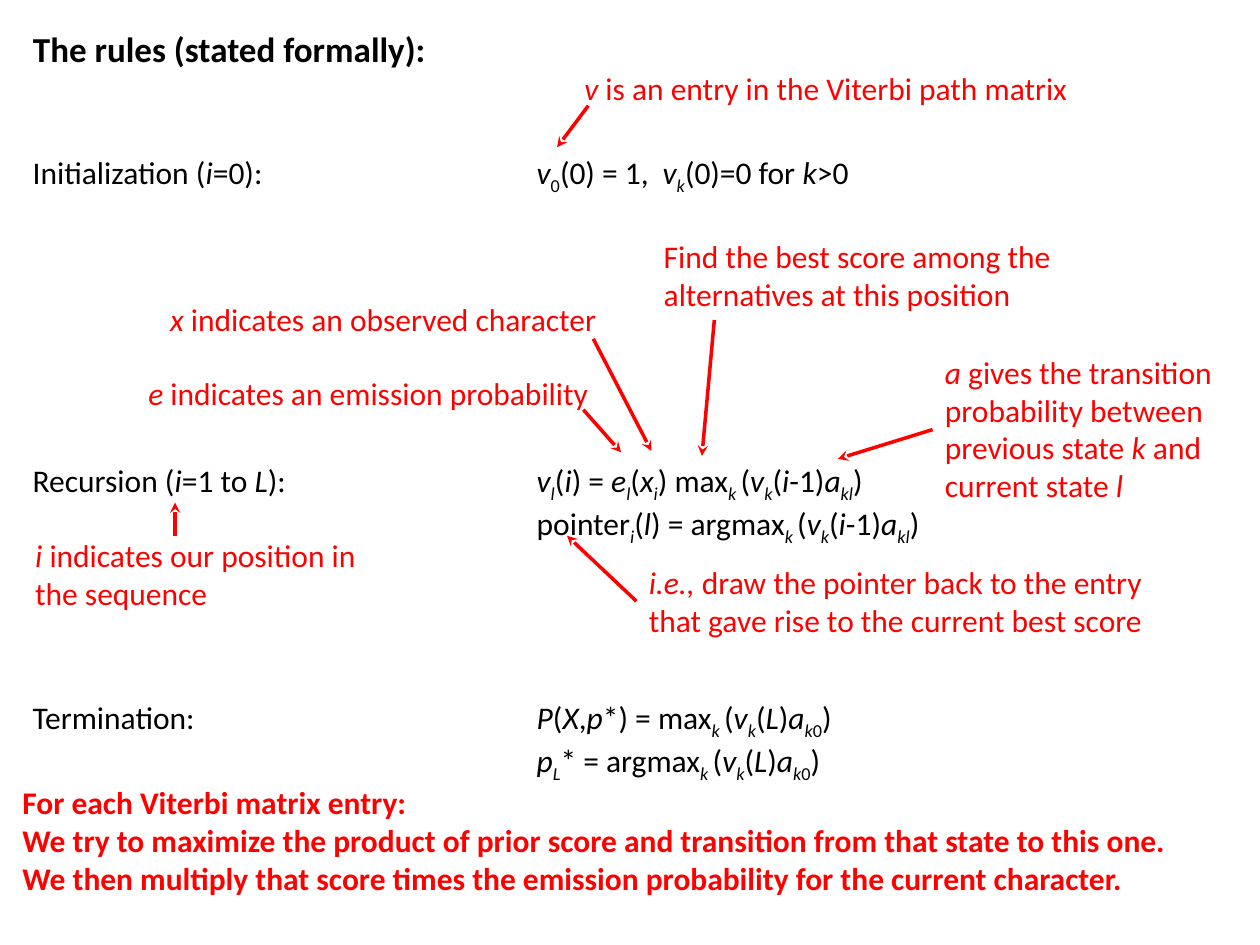
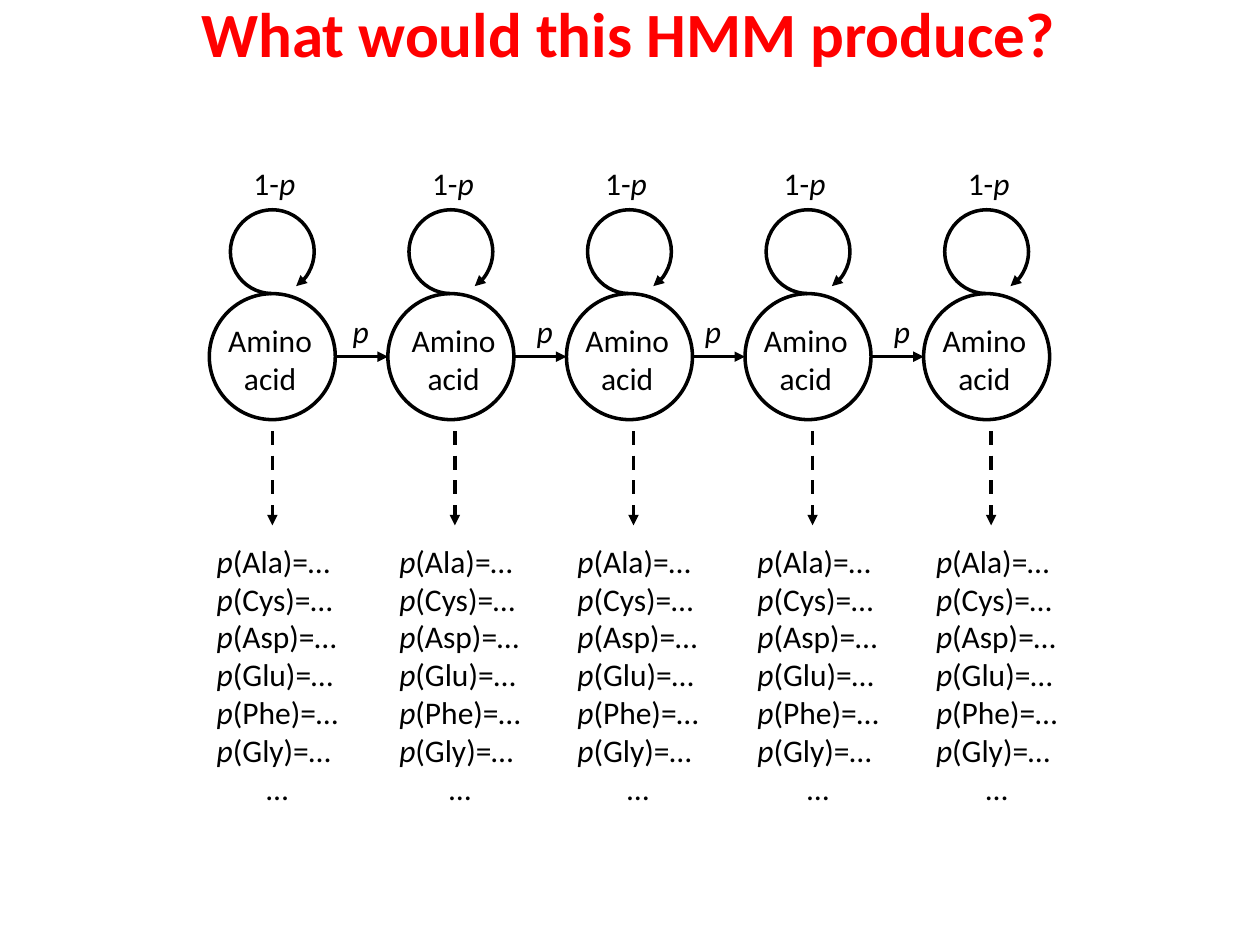
"""Build two slides on the Viterbi rules and a chained hidden Markov model."""
from lxml import etree
from pptx import Presentation
from pptx import util as u
from pptx.dml.color import RGBColor
from pptx.enum import dml, shapes, text
from pptx.oxml import ns

COLOURS = {"ink": "000000", "accent": "FF0000"}
Cm = u.Cm


class Sketch:
    """Hold the shared style and the current slide."""

    font = "Calibri"
    size = 18
    line_width = 2

    def __init__(self):
        self.deck = Presentation()
        self.deck.slide_width, self.deck.slide_height = Cm(25.4), Cm(19.05)
        self.page = None

    def colour(self, name):
        return RGBColor.from_string(COLOURS[name])

    def add_page(self, title, place, size, colour, align):
        self.page = self.deck.slides.add_slide(self.deck.slide_layouts[5])
        box = self.page.shapes.title
        box.left, box.top, box.width, box.height = map(Cm, place)
        frame = box.text_frame
        frame.auto_size = text.MSO_AUTO_SIZE.NONE
        frame.vertical_anchor = text.MSO_ANCHOR.TOP
        self.fill_frame(frame, [title], colour, align, size, bold=True)

    def fill_frame(self, frame, lines, colour="ink", align=None, size=None, bold=False):
        """Set lines in which ~ toggles italics and _ toggles subscript."""
        for number, line in enumerate(lines):
            para = frame.add_paragraph() if number else frame.paragraphs[0]
            para.alignment = align or text.PP_ALIGN.LEFT
            para.font.name = self.font
            para.font.size = u.Pt(size or self.size)
            para.font.bold = bold
            para.font.color.rgb = self.colour(colour)
            for turn, piece in enumerate(line.split("~")):
                for depth, part in enumerate(piece.split("_")):
                    if part:
                        span = para.add_run()
                        span.text = part
                        if turn % 2:
                            span.font.italic = True
                        if depth % 2:
                            span._r.get_or_add_rPr().set("baseline", "-25000")
        return frame.paragraphs

    def add_text(self, place, lines, wrap=False, **style):
        frame = self.page.shapes.add_textbox(*map(Cm, place)).text_frame
        frame.word_wrap = wrap
        frame.auto_size = text.MSO_AUTO_SIZE.SHAPE_TO_FIT_TEXT
        return self.fill_frame(frame, lines, **style)

    def draw_line(self, line, colour, head=None):
        line.color.rgb = self.colour(colour)
        line.width = u.Pt(self.line_width)
        if head:
            etree.SubElement(line._get_or_add_ln(), ns.qn("a:tailEnd"), type=head)

    def add_arrow(self, start, end, colour="ink", head="triangle", dashed=False):
        arrow = self.page.shapes.add_connector(
            shapes.MSO_CONNECTOR.STRAIGHT, *map(Cm, (*start, *end)))
        if dashed:
            arrow.line.dash_style = dml.MSO_LINE.DASH
        self.draw_line(arrow.line, colour, head)
        etree.SubElement(arrow._element.spPr, ns.qn("a:effectLst"))

    def add_outline(self, kind, place, head=None, adjust=()):
        shape = self.page.shapes.add_shape(kind, *map(Cm, place))
        for index, value in enumerate(adjust):
            shape.adjustments[index] = value
        shape.shadow.inherit = False
        shape.fill.background()
        self.draw_line(shape.line, "ink", head)

    def set_tabs(self, para, stops):
        properties = para._p.get_or_add_pPr()
        tabs = etree.Element(ns.qn("a:tabLst"))
        for stop in stops:
            etree.SubElement(tabs, ns.qn("a:tab"), pos=str(Cm(stop)), algn="l")
        properties.find(ns.qn("a:defRPr")).addprevious(tabs)


def build_rules(sketch):
    sketch.add_page("The rules (stated formally):", (0.41, 0.43, 24.13, 1.12),
                    20, "ink", text.PP_ALIGN.LEFT)
    best = "max~_k _~(~v_k_~(~i~-1)~a_kl_~)"
    final = "max~_k _~(~v_k_~(~L~)~a_k_~_0_)"
    rules = [
        ("Initialization (~i~=0):\t~v~_0_(0) = 1, \t~v_k_~(0)=0 for ~k~>0", 0),
        (f"Recursion (~i~=1 to ~L~):\t~v_l_~(~i~) = ~e_l_~(~x_i_~) {best}", 151),
        (f"\tpointer~_i_~(~l~) = arg{best}", 0),
        (f"Termination:\t~P~(~X~,~p~*) = {final}", 86.5),
        (f"\t~p_L_~* = arg{final}", 0),
    ]
    paras = sketch.add_text((0.41, 2.97, 24.77, 12.57),
                            [rule for rule, gap in rules], wrap=True)
    for para, (rule, gap) in zip(paras, rules):
        para.space_before = u.Pt(gap)
        sketch.set_tabs(para, (10.16, 12.7))

    notes = [
        ("~v~ is an entry in the Viterbi path matrix", False,
         (11.53, 1.27, 10.74, 1.02), (11.86, 2.13), (11.23, 2.97)),
        ("~e~ indicates an emission probability", False,
         (2.74, 7.42, 9.5, 1.02), (11.76, 8.26), (12.52, 9.12)),
        ("~a~ gives the transition probability between previous state ~k~ "
         "and current state ~l~", True,
         (18.8, 6.99, 6.4, 3.33), (18.8, 8.66), (16.89, 9.25)),
        ("~i.e., ~draw the pointer back to the entry that gave rise to the "
         "current best score", True,
         (12.83, 11.23, 11.1, 1.8), (12.83, 12.12), (11.43, 10.8)),
        ("Find the best score among the alternatives at this position", True,
         (13.13, 4.65, 9.63, 1.8), (14.4, 6.45), (14.15, 9.19)),
        ("~x~ indicates an observed character", False,
         (3.18, 5.92, 9.19, 1.02), (11.96, 6.83), (13.13, 9.09)),
        ("~i ~indicates our position in the sequence", True,
         (0.46, 10.69, 7.32, 1.8), (3.53, 10.8), (3.53, 10.13)),
    ]
    for note, wrap, place, start, end in notes:
        sketch.add_arrow(start, end, "accent", "stealth")
        sketch.add_text(place, [note], wrap, colour="accent")

    sketch.add_text((0.2, 15.67, 23.77, 2.57), [
        "For each Viterbi matrix entry:",
        "We try to maximize the product of prior score and transition from "
        "that state to this one.",
        "We then multiply that score times the emission probability for the "
        "current character.",
    ], colour="accent", bold=True)


def build_chain(sketch):
    sketch.add_page("What would this HMM produce?", (0.36, -0.23, 24.61, 1.8),
                    36, "accent", text.PP_ALIGN.CENTER)
    first, pitch, circle, loop = 4.22, 3.6, 2.54, 1.69
    top = 5.92
    middle = top + circle / 2
    residues = ("Ala", "Cys", "Asp", "Glu", "Phe", "Gly")
    emissions = [f"~p~({residue})=…" for residue in residues] + ["…"]
    name_shifts = (0.12, 0.22, 0.12, 0.12, 0.12)
    stay_shifts = (0.64, 0.64, 0.53, 0.53, 0.64)
    emit_shifts = (1.27, 1.35, 1.35, 1.36, 1.36)
    list_shifts = (-0.1, -0.02, -0.03, 0, 0)
    step_shifts = (0.1, 0.21, 0, 0.21, None)
    columns = zip(name_shifts, stay_shifts, emit_shifts, list_shifts, step_shifts)

    for index, (name, stay, emit, listing, step) in enumerate(columns):
        left = first + index * pitch
        right = left + circle
        sketch.add_outline(shapes.MSO_SHAPE.OVAL, (left, top, circle, circle))
        sketch.add_outline(
            shapes.MSO_SHAPE.ARC,
            (left + (circle - loop) / 2, top - loop, loop, loop),
            "triangle", (54.73, 33.17))
        sketch.add_text((left + stay, 3.18, 1.37, 1.02), ["1-~p~"])
        sketch.add_text((left + name, 6.35, 2.21, 1.8), ["Amino", "acid"],
                        align=text.PP_ALIGN.CENTER)
        if step is not None:
            sketch.add_arrow((right, middle), (left + pitch, middle))
            sketch.add_text((right + step, 6.17, 0.86, 1.02), ["~p~"])
        sketch.add_arrow((left + emit, 8.69), (left + emit, 10.59), dashed=True)
        paras = sketch.add_text((left + listing, 10.8, 2.97, 5.64), emissions)
        paras[-1].alignment = text.PP_ALIGN.CENTER


def main():
    sketch = Sketch()
    build_rules(sketch)
    build_chain(sketch)
    sketch.deck.save("out.pptx")


if __name__ == "__main__":
    main()
